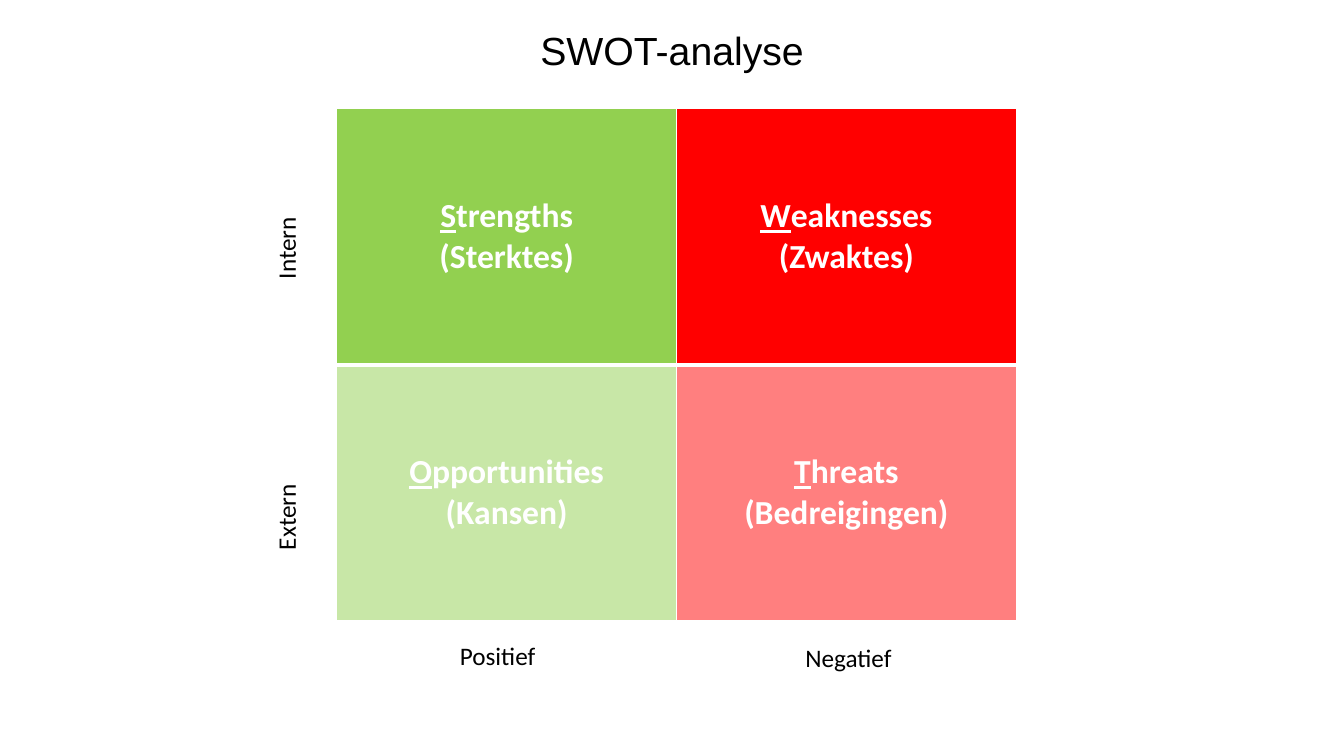
from lxml import etree
from pptx import Presentation
from pptx.dml.color import RGBColor
from pptx.enum.text import MSO_ANCHOR, PP_ALIGN
from pptx.oxml.ns import qn
from pptx.util import Inches, Pt

CENTER = PP_ALIGN.CENTER
MIDDLE = MSO_ANCHOR.MIDDLE
COLORS = {"green": "92D050", "red": "FF0000", "white": "FFFFFF", "black": "000000"}
QUADRANTS = [
    [("Strengths", "(Sterktes)", "green"), ("Weaknesses", "(Zwaktes)", "red")],
    [("Opportunities", "(Kansen)", "green"), ("Threats", "(Bedreigingen)", "red")],
]
AXIS_LABELS = [
    ("Positief", 3.36, 6.3, 0),
    ("Negatief", 6.84, 6.32, 0),
    ("Extern", 1.26, 4.93, 270),
    ("Intern", 1.26, 2.26, 270),
]


def add_run(paragraph, text, size, color, font="Calibri", bold=False, underline=False):
    run = paragraph.add_run()
    run.text = text
    run.font.name = font
    run.font.size = Pt(size)
    run.font.bold = bold
    run.font.underline = underline
    run.font.color.rgb = RGBColor.from_string(COLORS[color])


def add_label(slide, text, left, top, width, height, size, font="Calibri", rotation=0):
    label = slide.shapes.add_textbox(Inches(left), Inches(top), Inches(width), Inches(height))
    label.rotation = rotation
    label.text_frame.word_wrap = True
    paragraph = label.text_frame.paragraphs[0]
    paragraph.alignment = CENTER
    add_run(paragraph, text, size, "black", font)


def set_borders(cell, widths):
    properties = cell._tc.get_or_add_tcPr()
    for position, (edge, width) in enumerate(widths.items()):
        line = etree.Element(qn(f"a:{edge}"), w=str(Pt(width)))
        fill = etree.SubElement(line, qn("a:solidFill"))
        etree.SubElement(fill, qn("a:srgbClr"), val=COLORS["white"])
        properties.insert(position, line)


def fill_quadrant(cell, english, dutch, color, external):
    cell.vertical_anchor = MIDDLE
    cell.fill.solid()
    cell.fill.fore_color.rgb = RGBColor.from_string(COLORS[color])
    if external:
        tint = cell._tc.tcPr.find(f"{qn('a:solidFill')}/{qn('a:srgbClr')}")
        etree.SubElement(tint, qn("a:alpha"), val="50000")
    top, bottom = (3, 1) if external else (1, 3)
    set_borders(cell, {"lnL": 1, "lnR": 1, "lnT": top, "lnB": bottom})

    heading = cell.text_frame.paragraphs[0]
    translation = cell.text_frame.add_paragraph()
    heading.alignment = translation.alignment = CENTER
    add_run(heading, english[0], 24, "white", bold=True, underline=True)
    add_run(heading, english[1:], 24, "white", bold=True)
    add_run(translation, dutch, 24, "white", bold=True)


def add_matrix(slide):
    frame = slide.shapes.add_table(2, 2, Inches(3.34), Inches(1.08), Inches(6.74), Inches(5.08))
    matrix = frame.table
    for row, quadrants in enumerate(QUADRANTS):
        for column, (english, dutch, color) in enumerate(quadrants):
            fill_quadrant(matrix.cell(row, column), english, dutch, color, external=row == 1)


def main():
    presentation = Presentation()
    presentation.slide_width = Inches(13.33)
    presentation.slide_height = Inches(7.5)
    slide = presentation.slides.add_slide(presentation.slide_layouts[6])
    add_matrix(slide)
    for text, left, top, rotation in AXIS_LABELS:
        add_label(slide, text, left, top, 3.15, 0.4, 18, rotation=rotation)
    add_label(slide, "SWOT-analyse", 2.34, 0.21, 8.65, 0.57, 28, "Arial")
    presentation.save("out.pptx")


if __name__ == "__main__":
    main()
